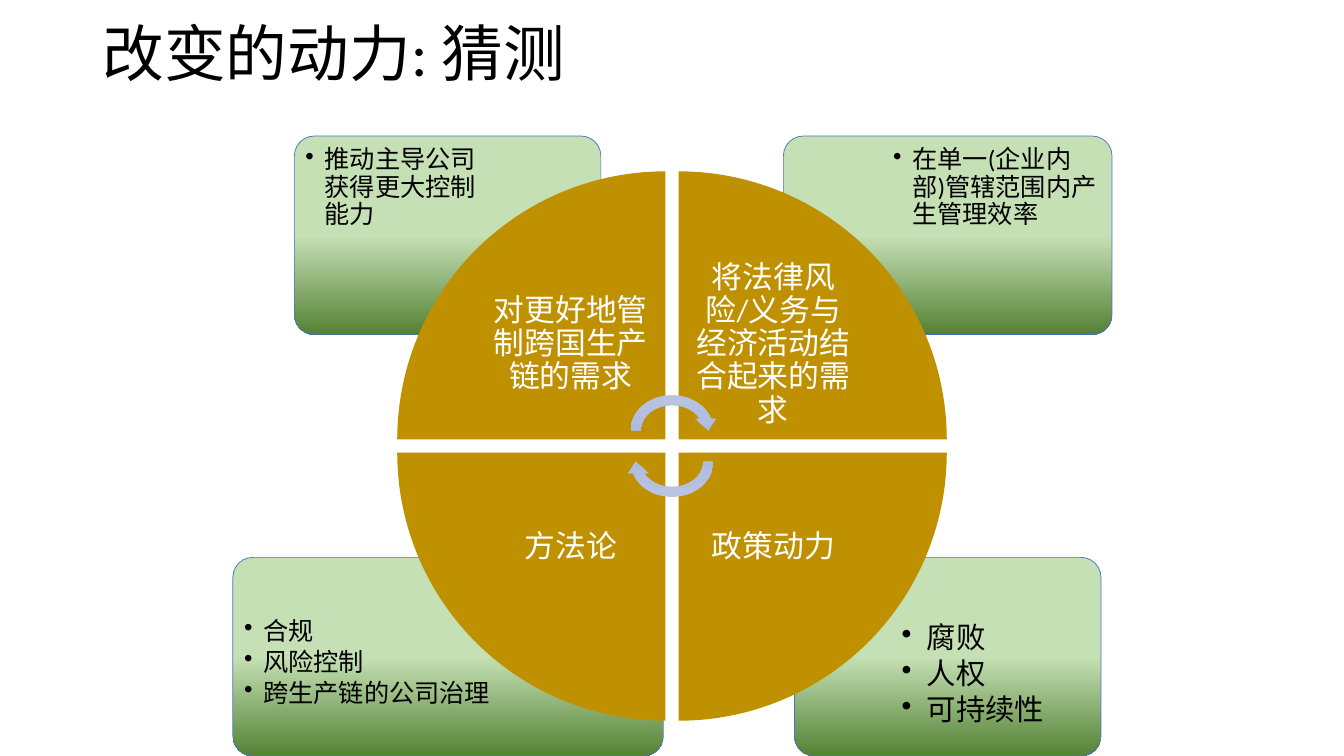
from copy import deepcopy
from dataclasses import dataclass

from lxml import etree
from pptx import Presentation
from pptx import util as u
from pptx.dml.color import RGBColor
from pptx.enum import shapes, text
from pptx.oxml.ns import qn


@dataclass(frozen=True)
class Theme:
    font: str = "Calibri"
    ink: str = "000000"
    pale: str = "FFFFFF"
    gold: str = "BF9000"
    edge: str = "4472C4"
    card: tuple = ("C5E0B4", "C5E0B4", "548235")
    arrow: tuple = ("BBC5E3", "AEBBE0", "98A4CB")
    title: int = 44
    wedge: int = 22
    large: int = 21
    body: int = 18


T = Theme()
KIND = shapes.MSO_SHAPE
WIDE, HIGH = 13.33, 7.5
CARDS = [
    (2.92, 1.35, 3.04, 0, 0, T.body, ["推动主导公司获得更大控制能力"]),
    (7.77, 1.35, 3.26, 1, 0, T.body, ["在单一(企业内部)管辖范围内产生管理效率"]),
    (2.31, 5.53, 4.27, 0, 1, T.body, ["合规", "风险控制", "跨生产链的公司治理"]),
    (7.88, 5.53, 3.04, 1, 1, T.large, ["腐败", "人权", "可持续性"]),
]
WEDGES = [
    (0, 0, 0, "对更好地管制跨国生产链的需求"),
    (1, 0, 90, "将法律风险/义务与经济活动结合起来的需求"),
    (1, 1, 180, "政策动力"),
    (0, 1, 270, "方法论"),
]


def blend(fill, shape, tones):
    fill.gradient()
    fill.gradient_angle = 270
    stops = shape._element.spPr.find(qn("a:gradFill")).find(qn("a:gsLst"))
    stops.insert(1, deepcopy(stops[0]))
    for stop, tone, place in zip(fill.gradient_stops, tones, (0, 0.5, 1)):
        stop.color.rgb = RGBColor.from_string(tone)
        stop.position = place


def form(slide, kind, box, tones, turn=0):
    shape = slide.shapes.add_shape(kind, *map(u.Inches, box))
    shape.shadow.inherit = False
    shape.rotation = turn
    if isinstance(tones, tuple):
        blend(shape.fill, shape, tones)
    else:
        shape.fill.solid()
        shape.fill.fore_color.rgb = RGBColor.from_string(tones)
    shape.line.fill.background()
    return shape


def words(slide, box, lines, size, tone, pad, mid=True, align=None, after=0, dent=0):
    frame = slide.shapes.add_textbox(*map(u.Inches, box)).text_frame
    frame.word_wrap = True
    frame.vertical_anchor = text.MSO_ANCHOR.MIDDLE if mid else text.MSO_ANCHOR.TOP
    frame.margin_left = frame.margin_right = u.Inches(pad[0])
    frame.margin_top = frame.margin_bottom = u.Inches(pad[1])
    frame.text = "\n".join(lines)
    for par in frame.paragraphs:
        if dent:
            props = par._p.get_or_add_pPr()
            props.set("marL", str(u.Inches(dent)))
            props.set("indent", str(-u.Inches(dent)))
            etree.SubElement(props, qn("a:buChar")).set("char", "•")
        par.alignment = align
        par.line_spacing = 0.9
        par.space_after = u.Pt(after)
        for run in par.runs:
            run.font.name = T.font
            run.font.size = u.Pt(size)
            run.font.color.rgb = RGBColor.from_string(tone)


def card(slide, left, top, wide, right, low, size, lines):
    tall, inset, deep = 1.97, 0.04, 1.39
    shape = form(slide, KIND.ROUNDED_RECTANGLE, (left, top, wide, tall), T.card)
    shape.adjustments[0] = 0.1
    shape.line.color.rgb = RGBColor.from_string(T.edge)
    shape.line.width = u.Pt(0.5)
    span = 0.7 * wide - 2 * inset
    x = left + (wide - inset - span if right else inset)
    y = top + (tall - inset - deep if low else inset)
    pad, dent = (0.11, 0.25) if size == T.large else (0.07, 0.19)
    words(slide, (x, y, span, deep), lines, size, T.ink, (pad, pad),
          mid=False, after=0.15 * size, dent=dent)


def wheel(slide, left, top, side, gap):
    step, inner = side + gap, 1.88
    for col, row, turn, label in WEDGES:
        x, y = left + col * step, top + row * step
        form(slide, KIND.PIE_WEDGE, (x, y, side, side), T.gold, turn)
        box = (x + (1 - col) * (side - inner), y + (1 - row) * (side - inner),
               inner, inner)
        words(slide, box, [label], T.wedge, T.pale, (0.17, 0.17),
              align=text.PP_ALIGN.CENTER)
    wide, tall, shift = 0.92, 0.8, 0.155
    mid = side + gap / 2
    for sign, turn in ((-1, 0), (1, 180)):
        box = (left + mid - wide / 2, top + mid + sign * shift - tall / 2, wide, tall)
        form(slide, KIND.CIRCULAR_ARROW, box, T.arrow, turn)


def main():
    deck = Presentation()
    deck.slide_width, deck.slide_height = u.Inches(WIDE), u.Inches(HIGH)
    slide = deck.slides.add_slide(deck.slide_layouts[6])
    words(slide, (0.92, 0, 11.5, 1.12), ["改变的动力: 猜测"], T.title, T.ink,
          (0.1, 0.05))
    for item in reversed(CARDS):
        card(slide, *item)
    wheel(slide, 3.94, 1.7, 2.66, 0.13)
    deck.save("out.pptx")


if __name__ == "__main__":
    main()
